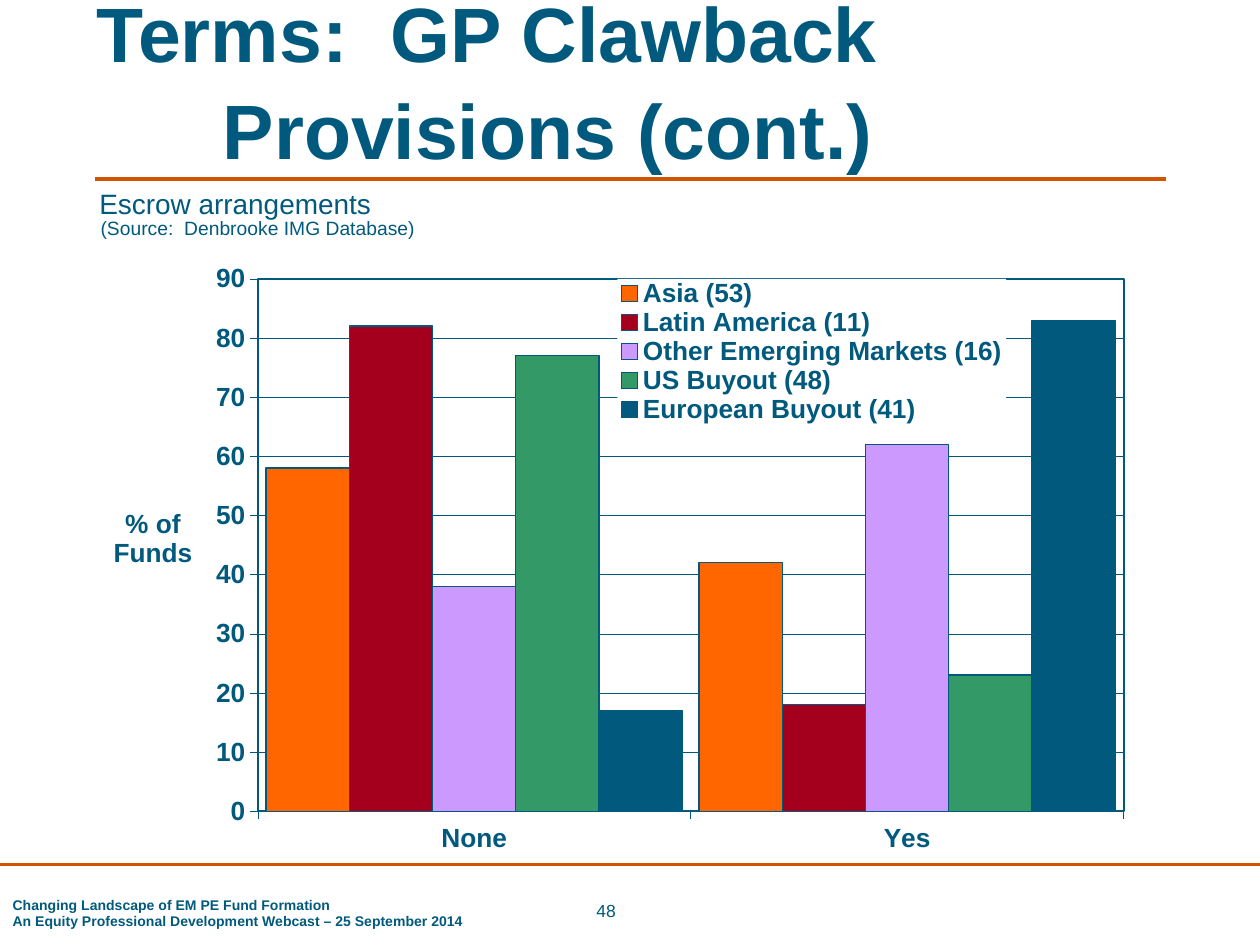
from lxml import etree
from pptx import Presentation
from pptx.chart.data import CategoryChartData
from pptx.dml.color import RGBColor
from pptx.enum.chart import XL_CHART_TYPE as ChartType, XL_LEGEND_POSITION as LegendPos
from pptx.enum.chart import XL_TICK_MARK as Tick
from pptx.enum.shapes import MSO_CONNECTOR as Connector
from pptx.enum.text import MSO_ANCHOR as Anchor, PP_ALIGN as Align
from pptx.oxml import parse_xml
from pptx.oxml.ns import nsdecls, qn
from pptx.util import Inches, Pt

TEAL, ORANGE, WHITE = "015A7D", "D15400", "FFFFFF"
COLUMNS, ROWS = 100, 75

ANSWERS = ["None", "Yes"]
REGIONS = [
    ("Asia (53)", [58, 42], "FF6600"),
    ("Latin America (11)", [82, 18], "A4001D"),
    ("Other Emerging Markets (16)", [38, 62], "CC99FF"),
    ("US Buyout (48)", [77, 23], "339966"),
    ("European Buyout (41)", [17, 83], TEAL),
]


def rgb(code):
    return RGBColor.from_string(code)


def chart_layout(x, y, w=None, h=None, inner=False):
    """Manual chart layout element, in shares of the chart's size."""
    target = '<c:layoutTarget val="inner"/>' if inner else ""
    parts = "".join(f'<c:{axis}Mode val="edge"/>' for axis in "xy")
    sizes = zip("xywh", (x, y, w, h))
    parts += "".join(f'<c:{key} val="{share}"/>' for key, share in sizes if share is not None)
    return parse_xml(f'<c:layout {nsdecls("c")}><c:manualLayout>{target}{parts}'
                     '</c:manualLayout></c:layout>')


def chart_box(fill=None, line=None, width=1):
    """Shape properties for a chart part that has no public format object."""
    def paint(code):
        return f'<a:solidFill><a:srgbClr val="{code}"/></a:solidFill>' if code else "<a:noFill/>"
    return parse_xml(f'<c:spPr {nsdecls("c", "a")}>{paint(fill)}'
                     f'<a:ln w="{Pt(width)}">{paint(line)}</a:ln></c:spPr>')


class SlideBuilder:
    font_name = "Arial"
    ink = TEAL
    rule_color = ORANGE
    chart_size = 15
    hairline = 0.17

    def __init__(self, prs):
        self.slide = prs.slides.add_slide(prs.slide_layouts[6])
        self.col = prs.slide_width / COLUMNS
        self.row = prs.slide_height / ROWS
        self.slide.background.fill.solid()
        self.slide.background.fill.fore_color.rgb = rgb(WHITE)

    def place(self, x, y, w, h):
        return [round(n) for n in (x * self.col, y * self.row, w * self.col, h * self.row)]

    def style(self, font, size, bold=False):
        font.name, font.size, font.bold = self.font_name, Pt(size), bold
        font.color.rgb = rgb(self.ink)

    def stroke(self, line, width):
        line.color.rgb = rgb(self.ink)
        line.width = Pt(width)

    def text(self, box, lines, size, bold=False, anchor=Anchor.TOP, align=Align.LEFT,
             left=0.1, top=0.05, hanging=0, spacing=None):
        frame = self.slide.shapes.add_textbox(*self.place(*box)).text_frame
        frame.word_wrap = True
        frame.vertical_anchor = anchor
        frame.margin_left, frame.margin_top = Inches(left), Inches(top)
        for index, line in enumerate(lines):
            paragraph = frame.add_paragraph() if index else frame.paragraphs[0]
            paragraph.alignment = align
            if spacing:
                paragraph.line_spacing = spacing
            if hanging:
                properties = paragraph._p.get_or_add_pPr()
                properties.set("marL", str(Inches(hanging)))
                properties.set("indent", str(-Inches(hanging)))
            run = paragraph.add_run()
            run.text = line
            self.style(run.font, size, bold)

    def rule(self, x1, x2, y):
        x1, y, x2, _ = self.place(x1, y, x2, 0)
        rule = self.slide.shapes.add_connector(Connector.STRAIGHT, x1, y, x2, y)
        rule.line.color.rgb = rgb(self.rule_color)
        rule.line.width = Pt(2)
        etree.SubElement(rule._element.spPr, qn("a:effectLst"))

    def column_chart(self, box, categories, series, axis_title):
        data = CategoryChartData()
        data.categories = categories
        for name, values, _ in series:
            data.add_series(name, values)
        chart = self.slide.shapes.add_chart(
            ChartType.COLUMN_CLUSTERED, *self.place(*box), data).chart
        chart.has_title = False
        self.style(chart.font, self.chart_size, bold=True)
        self.columns(chart, series)
        self.axes(chart, axis_title)
        self.legend(chart)

    def columns(self, chart, series):
        plot = chart.plots[0]
        plot.gap_width, plot.overlap = 20, 0
        plot.vary_by_categories = False
        for bars, (_, _, color) in zip(plot.series, series):
            bars.format.fill.solid()
            bars.format.fill.fore_color.rgb = rgb(color)
            self.stroke(bars.format.line, 0.69)
        area = chart._chartSpace.chart.plotArea
        for old in area.findall(qn("c:layout")):
            area.remove(old)
        area.insert(0, chart_layout(0.157, 0.09, 0.802, 0.805, inner=True))
        area.append(chart_box(line=self.ink))

    def axes(self, chart, axis_title):
        for axis in (chart.category_axis, chart.value_axis):
            axis.major_tick_mark = Tick.OUTSIDE
            axis.minor_tick_mark = Tick.NONE
            self.style(axis.tick_labels.font, self.chart_size, bold=True)
            self.stroke(axis.format.line, self.hairline)
        scale = chart.value_axis
        scale.minimum_scale, scale.maximum_scale, scale.major_unit = 0, 90, 10
        scale.has_major_gridlines = True
        self.stroke(scale.major_gridlines.format.line, self.hairline)
        frame = scale.axis_title.text_frame
        for index, line in enumerate(axis_title):
            paragraph = frame.add_paragraph() if index else frame.paragraphs[0]
            run = paragraph.add_run()
            run.text = line
            self.style(run.font, self.chart_size, bold=True)
        title = scale.axis_title._element
        body = next(title.iter(qn("a:bodyPr")))
        body.set("rot", "0")
        body.set("vert", "horz")
        for old in title.findall(qn("c:layout")):
            title.remove(old)
        title.find(qn("c:tx")).addnext(chart_layout(0.02, 0.43))

    def legend(self, chart):
        chart.has_legend = True
        legend = chart.legend
        legend.position = LegendPos.RIGHT
        legend.include_in_layout = False
        self.style(legend.font, self.chart_size, bold=True)
        element = legend._element
        for old in element.findall(qn("c:layout")):
            element.remove(old)
        element.find(qn("c:legendPos")).addnext(chart_layout(0.49, 0.09, 0.36, 0.22))
        element.find(qn("c:overlay")).addnext(chart_box(fill=WHITE))


def main():
    prs = Presentation()
    prs.slide_width, prs.slide_height = Inches(10), Inches(7.5)
    page = SlideBuilder(prs)

    page.text((1, 70.6, 66.8, 3.7),
              ["Changing Landscape of EM PE Fund Formation",
               "An Equity Professional Development Webcast – 25 September 2014"],
              8, bold=True, anchor=Anchor.MIDDLE, left=0)
    page.rule(0, 100, 68.6)
    page.rule(7.5, 92.5, 14.2)
    page.text((6.7, 5.2, 87.2, 9.2), ["Terms:  GP Clawback Provisions (cont.)"],
              44, bold=True, anchor=Anchor.BOTTOM, hanging=1, spacing=1.05)
    page.text((6.9, 14.3, 77.2, 8.2), ["Escrow arrangements"], 16)
    page.column_chart((7, 17.4, 85.7, 52.5), ANSWERS, REGIONS, ["% of", "Funds"])
    page.text((7, 15.6, 31.8, 6.7), ["(Source:  Denbrooke IMG Database)"], 11, top=0.16)
    page.text((37.7, 69.8, 20.8, 5), ["48"], 10, anchor=Anchor.MIDDLE, align=Align.CENTER)

    prs.save("out.pptx")


if __name__ == "__main__":
    main()
